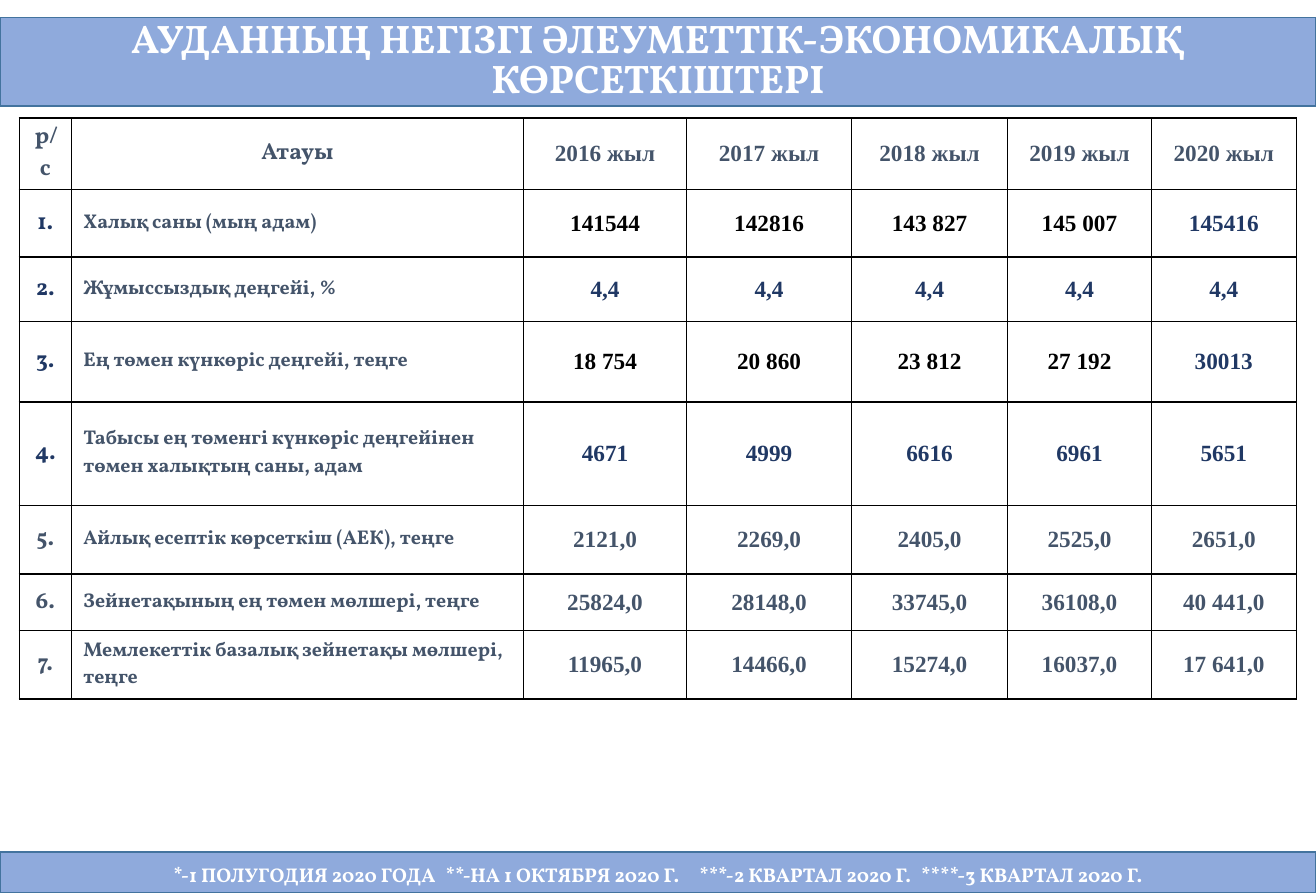
from lxml.etree import SubElement
from pptx import Presentation
from pptx.dml.color import RGBColor
from pptx.enum.shapes import MSO_SHAPE
from pptx.enum.text import MSO_ANCHOR, MSO_AUTO_SIZE, PP_ALIGN
from pptx.oxml.ns import qn
from pptx.util import Cm, Pt

HUES = {"band": "8FAADC", "edge": "43739E", "white": "FFFFFF",
        "slate": "44546A", "navy": "203864", "black": "000000"}
SERIF, ROMAN = "Vollkorn", "Times New Roman"

TITLE = "АУДАННЫҢ НЕГІЗГІ ӘЛЕУМЕТТІК-ЭКОНОМИКАЛЫҚ КӨРСЕТКІШТЕРІ"
NOTES = ["*-1 полугодия 2020 года", "**-на 1 октября 2020 г.",
         "***-2 квартал 2020 г.", "****-3 квартал 2020 г."]
GAPS = [300, 900, 300]  # extra width after each note, in 1/100 pt

HEAD = ["р/с", "Атауы"] + [f"{year} жыл" for year in range(2016, 2021)]
# name, colour of the row number, of 2016-2019 and of 2020, then the values
ROWS = [
    ("Халық саны (мың адам)", "navy", "black", "navy",
     ["141544", "142816", "143 827", "145 007", "145416"]),
    ("Жұмыссыздық деңгейі, %", "navy", "navy", "navy", ["4,4"] * 5),
    ("Ең төмен күнкөріс деңгейі, теңге", "navy", "black", "navy",
     ["18 754", "20 860", "23 812", "27 192", "30013"]),
    ("Табысы ең төменгі күнкөріс деңгейінен төмен халықтың саны, адам",
     "navy", "navy", "navy", ["4671", "4999", "6616", "6961", "5651"]),
    ("Айлық есептік көрсеткіш (АЕК), теңге", "slate", "slate", "slate",
     ["2121,0", "2269,0", "2405,0", "2525,0", "2651,0"]),
    ("Зейнетақының ең төмен мөлшері, теңге", "slate", "slate", "slate",
     ["25824,0", "28148,0", "33745,0", "36108,0", "40 441,0"]),
    ("Мемлекеттік базалық зейнетақы мөлшері, теңге", "slate", "slate", "slate",
     ["11965,0", "14466,0", "15274,0", "16037,0", "17 641,0"]),
]
WIDTHS = [1.11, 9.62, 3.47, 3.51, 3.32, 3.06, 3.08]
HEIGHTS = [1.52, 1.44, 1.37, 1.71, 2.2, 1.46, 1.21, 1.45]


def rgb(hue):
    return RGBColor.from_string(HUES[hue])


def assign(item, values):
    for key, value in values.items():
        setattr(item, key, value)


class Deck:
    def __init__(self, wide, high):
        self.show = Presentation()
        assign(self.show, {"slide_width": Cm(wide), "slide_height": Cm(high)})
        self.slide = self.show.slides.add_slide(self.show.slide_layouts[5])

    def words(self, para, text, size, hue, face=SERIF):
        run = para.add_run()
        run.text = text
        assign(run.font, {"size": Pt(size), "name": face, "bold": True})
        run.font.color.rgb = rgb(hue)
        return run

    def paint(self, shape, box):
        """Give a shape the band's place, colours and text frame; return its paragraph."""
        assign(shape, dict(zip(("left", "top", "width", "height"), map(Cm, box))))
        shape.fill.solid()
        shape.fill.fore_color.rgb = rgb("band")
        shape.line.color.rgb = rgb("edge")
        shape.line.width = Pt(1)
        assign(shape.text_frame, {"word_wrap": True, "auto_size": MSO_AUTO_SIZE.NONE,
                                  "vertical_anchor": MSO_ANCHOR.MIDDLE})
        para = shape.text_frame.paragraphs[0]
        para.alignment = PP_ALIGN.CENTER
        return para

    def title(self, text, box):
        para = self.paint(self.slide.shapes.title, box)
        para.line_spacing = 0.83
        self.words(para, text, 24, "white")

    def footer(self, notes, gaps, box):
        shape = self.slide.shapes.add_shape(MSO_SHAPE.FLOWCHART_PROCESS, *map(Cm, box))
        shape.shadow.inherit = False
        para = self.paint(shape, box)
        for note, gap in zip(notes, gaps + [0]):
            run = self.words(para, note, 15, "white")
            run._r.get_or_add_rPr().set("cap", "small")
            if gap:
                space = self.words(para, " ", 15, "white")
                space._r.get_or_add_rPr().set("spc", str(gap))

    def table(self, left, top, widths, heights):
        frame = self.slide.shapes.add_table(
            len(heights), len(widths), Cm(left), Cm(top),
            Cm(sum(widths)), Cm(sum(heights)))
        grid = frame.table
        assign(grid, {"first_row": False, "horz_banding": False})
        for col, wide in zip(grid.columns, widths):
            col.width = Cm(wide)
        for row, high in zip(grid.rows, heights):
            row.height = Cm(high)
        return grid

    def cell(self, cell, text, hue, face=SERIF, size=14, align=PP_ALIGN.CENTER):
        assign(cell, {"vertical_anchor": MSO_ANCHOR.MIDDLE,
                      "margin_top": Cm(0.05), "margin_bottom": Cm(0.05)})
        para = cell.text_frame.paragraphs[0]
        para.alignment = align
        self.words(para, text, size, hue, face)
        props = cell._tc.get_or_add_tcPr()
        for side in ("lnL", "lnR", "lnT", "lnB"):
            line = SubElement(props, qn(f"a:{side}"), w=str(Pt(1)))
            fill = SubElement(line, qn("a:solidFill"))
            SubElement(fill, qn("a:srgbClr"), val=HUES["black"])
        cell.fill.solid()
        cell.fill.fore_color.rgb = rgb("white")


def main():
    deck = Deck(28, 19)
    deck.title(TITLE, (0, 0.37, 28, 1.88))
    deck.footer(NOTES, GAPS, (0, 18.13, 28, 0.87))

    grid = deck.table(0.41, 2.51, WIDTHS, HEIGHTS)
    for col, text in enumerate(HEAD):
        deck.cell(grid.cell(0, col), text, "slate", SERIF if col < 2 else ROMAN)
    for row, (name, mark, past, last, values) in enumerate(ROWS, 1):
        deck.cell(grid.cell(row, 0), f"{row}.", mark)
        deck.cell(grid.cell(row, 1), name, "slate", size=12, align=PP_ALIGN.LEFT)
        for col, (value, hue) in enumerate(zip(values, [past] * 4 + [last]), 2):
            deck.cell(grid.cell(row, col), value, hue, ROMAN)

    deck.show.save("out.pptx")


if __name__ == "__main__":
    main()
